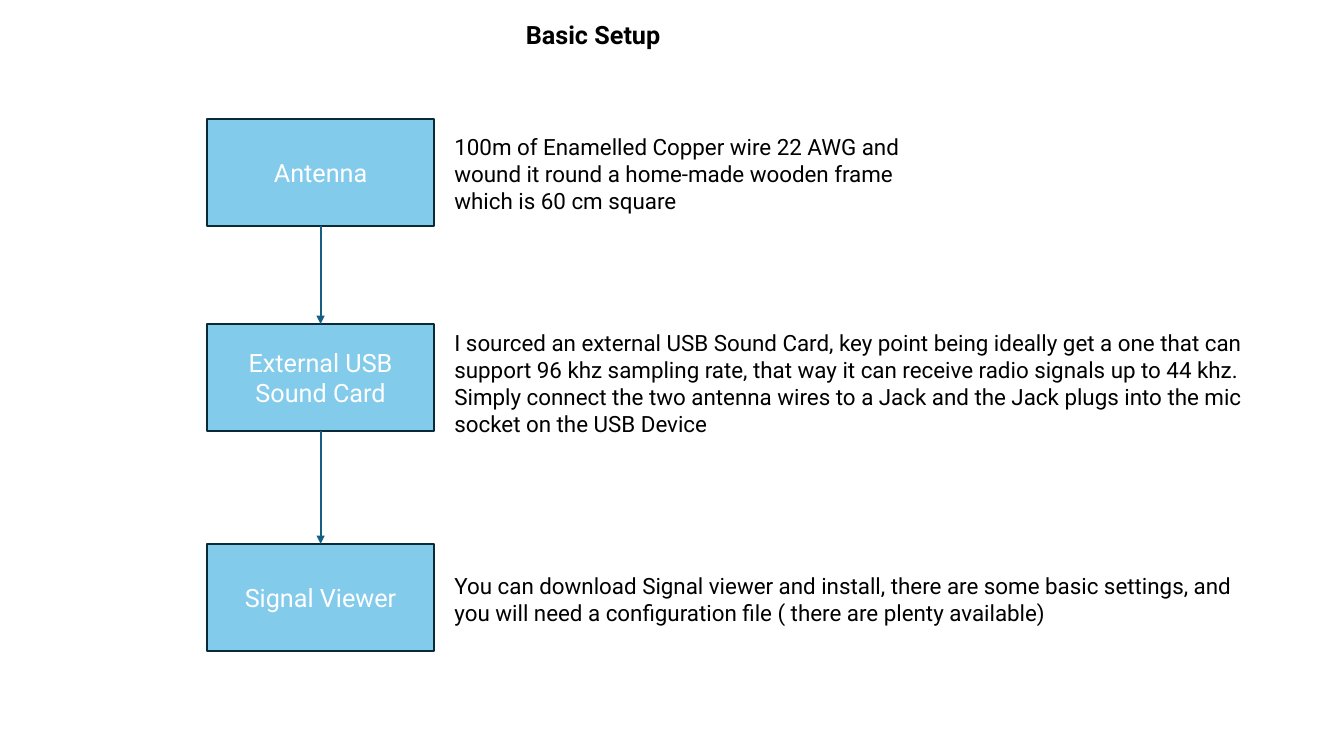
"""Build a slide showing the basic setup of a radio receiver as a three-step flow."""
from dataclasses import dataclass
from itertools import pairwise

from lxml.etree import SubElement
from pptx import Presentation
from pptx.dml.color import RGBColor
from pptx.enum.shapes import MSO_CONNECTOR, MSO_SHAPE
from pptx.enum.text import MSO_ANCHOR, PP_ALIGN
from pptx.oxml.ns import qn
from pptx.shapes.autoshape import Shape
from pptx.slide import Slide
from pptx.util import Pt

SKY = RGBColor(0x83, 0xCB, 0xEB)
NAVY = RGBColor(0x09, 0x2A, 0x39)
TEAL = RGBColor(0x15, 0x60, 0x82)
WHITE = RGBColor(0xFF, 0xFF, 0xFF)
BLACK = RGBColor(0x00, 0x00, 0x00)

FONT = "Roboto"
LINE_WIDTH = 1.5
STEP_LEFT, STEP_WIDTH, STEP_HEIGHT = 148, 162, 76.5
NOTE_LEFT = 317.5


@dataclass
class Step:
    """A stage of the setup and the note beside it."""

    name: str
    top: float
    note: str
    note_top: float
    note_width: float
    note_height: float


STEPS = [
    Step("Antenna", 85,
         "100m of Enamelled Copper wire 22 AWG and wound it round a home-made "
         "wooden frame which is 60 cm square",
         91.5, 366.5, 65.5),
    Step("External USB Sound Card", 231.5,
         "I sourced an external USB Sound Card, key point being ideally get a one "
         "that can support 96 khz sampling rate, that way it can receive radio "
         "signals up to 44 khz. Simply connect the two antenna wires to a Jack and "
         "the Jack plugs into the mic socket on the USB Device",
         231.5, 598.5, 98),
    Step("Signal Viewer", 388.5,
         "You can download Signal viewer and install, there are some basic settings, "
         "and you will need a configuration file ( there are plenty available)",
         405, 588, 67.5),
]


def write(box: Shape, text: str, size: float, color: RGBColor, bold: bool = False) -> None:
    """Set the text of a box and format its runs."""
    box.text_frame.text = text
    for para in box.text_frame.paragraphs:
        for span in para.runs:
            span.font.name = FONT
            span.font.size = Pt(size)
            span.font.bold = bold
            span.font.color.rgb = color


def add_step(page: Slide, step: Step) -> Shape:
    """Draw the rectangle of a step."""
    box = page.shapes.add_shape(MSO_SHAPE.RECTANGLE, Pt(STEP_LEFT), Pt(step.top),
                                Pt(STEP_WIDTH), Pt(STEP_HEIGHT))
    box.shadow.inherit = False
    box.fill.solid()
    box.fill.fore_color.rgb = SKY
    box.line.color.rgb = NAVY
    box.line.width = Pt(LINE_WIDTH)
    write(box, step.name, 18, WHITE)
    box.text_frame.vertical_anchor = MSO_ANCHOR.MIDDLE
    box.text_frame.paragraphs[0].alignment = PP_ALIGN.CENTER
    return box


def add_note(page: Slide, step: Step) -> None:
    """Write the note to the right of a step."""
    box = page.shapes.add_textbox(Pt(NOTE_LEFT), Pt(step.note_top),
                                  Pt(step.note_width), Pt(step.note_height))
    box.text_frame.word_wrap = True
    write(box, step.note, 16, BLACK)


def add_arrow(page: Slide, upper: Shape, lower: Shape) -> None:
    """Join two steps with a downward arrow."""
    arrow = page.shapes.add_connector(MSO_CONNECTOR.STRAIGHT, 0, 0, 0, 0)
    arrow.begin_connect(upper, 2)
    arrow.end_connect(lower, 0)
    arrow.line.color.rgb = TEAL
    arrow.line.width = Pt(LINE_WIDTH)
    outline = arrow._element.spPr.find(qn("a:ln"))
    SubElement(outline, qn("a:tailEnd"), type="triangle")
    SubElement(arrow._element.spPr, qn("a:effectLst"))


def add_title(page: Slide) -> None:
    """Write the slide title."""
    box = page.shapes.add_textbox(Pt(368.5), Pt(10.5), Pt(116), Pt(29))
    box.text_frame.word_wrap = False
    write(box, "Basic Setup", 18, BLACK, bold=True)


def main() -> None:
    """Assemble and save the deck."""
    deck = Presentation()
    deck.slide_width, deck.slide_height = Pt(960), Pt(540)
    page = deck.slides.add_slide(deck.slide_layouts[6])
    boxes = [add_step(page, step) for step in STEPS]
    for step in STEPS:
        add_note(page, step)
    for upper, lower in pairwise(boxes):
        add_arrow(page, upper, lower)
    add_title(page)
    deck.save("out.pptx")


if __name__ == "__main__":
    main()
